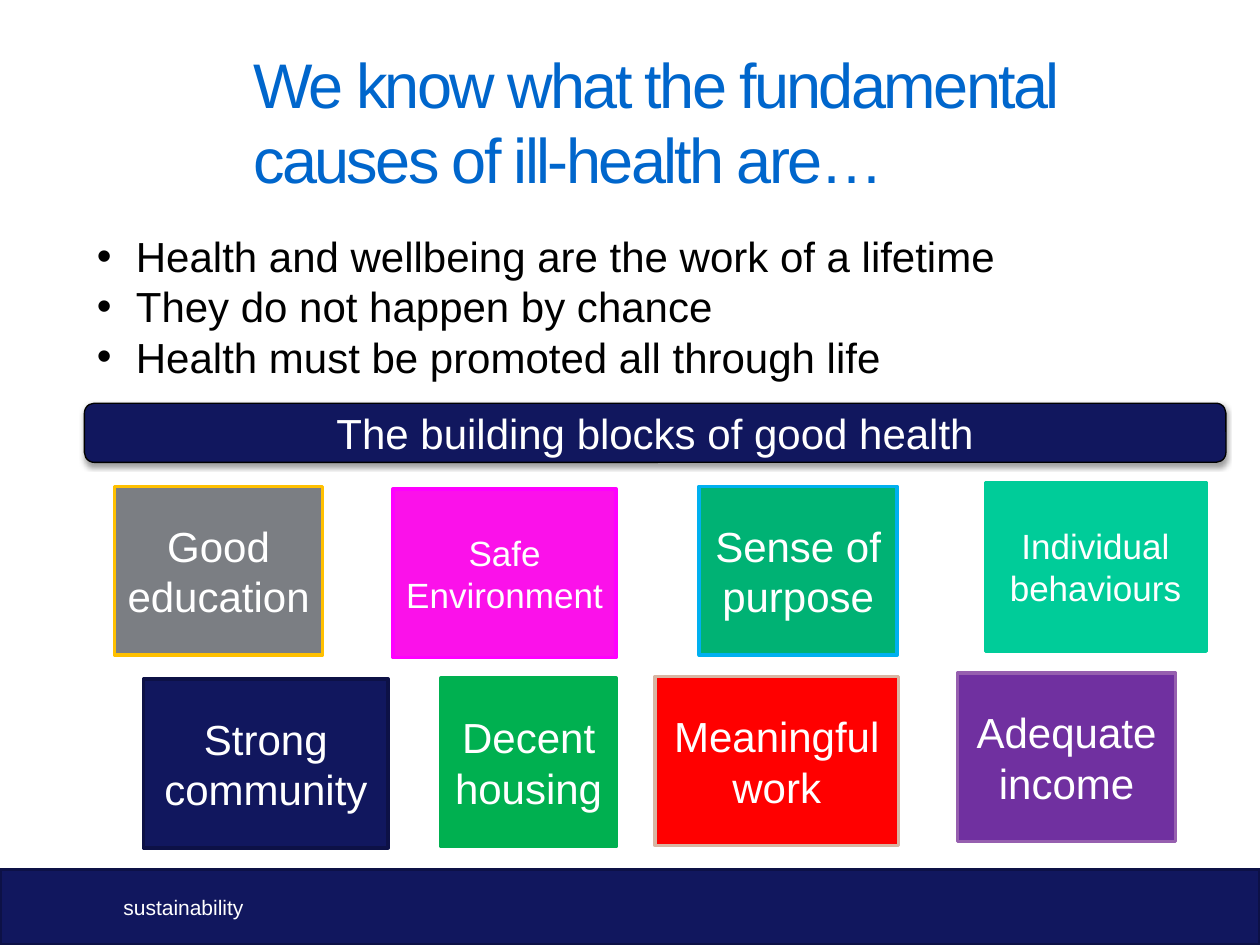
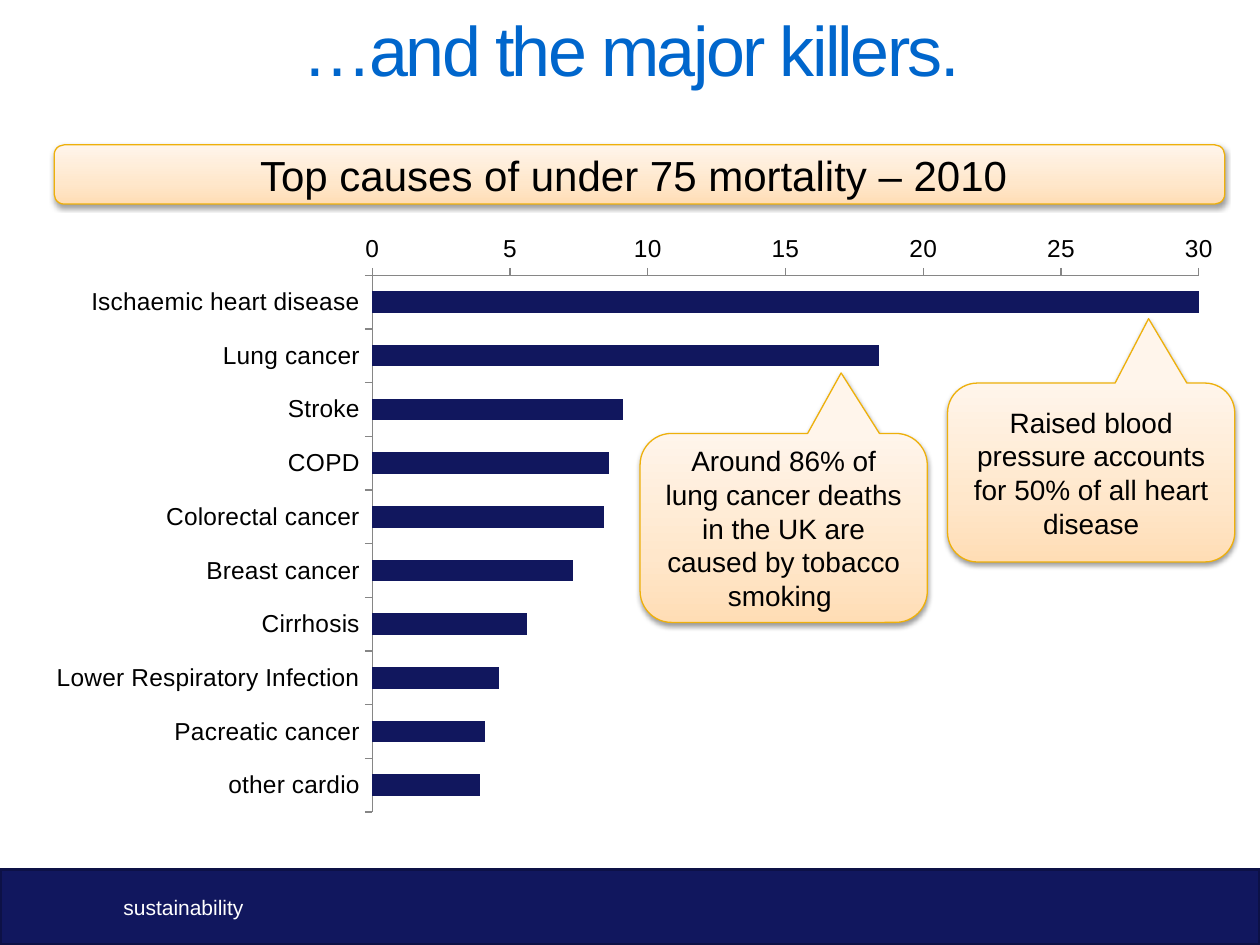
from dataclasses import dataclass

import pptx
import pptx.chart.data
import pptx.dml.color
import pptx.enum.chart
import pptx.enum.shapes
import pptx.enum.text
import pptx.oxml
import pptx.oxml.ns
import pptx.util
from pptx.dml.color import RGBColor
from pptx.util import Inches

FONT = "Arial"
WHITE = RGBColor(0xFF, 0xFF, 0xFF)
BLACK = RGBColor(0x00, 0x00, 0x00)
NAVY = RGBColor(0x11, 0x17, 0x5E)
DARK_NAVY = RGBColor(0x0D, 0x11, 0x46)
TITLE_BLUE = RGBColor(0x00, 0x66, 0xCC)
AXIS_GREY = RGBColor(0x86, 0x86, 0x86)
AMBER = RGBColor(0xEE, 0xB0, 0x0B)
GOLD = RGBColor(0xFF, 0xC0, 0x00)
GREY = RGBColor(0x7B, 0x7E, 0x83)
GREEN = RGBColor(0x00, 0xB0, 0x50)
SEA_GREEN = RGBColor(0x00, 0xB2, 0x74)
SKY = RGBColor(0x00, 0xB0, 0xF0)
RED = RGBColor(0xFF, 0x00, 0x00)
SAND = RGBColor(0xD8, 0xB5, 0xA3)
PURPLE = RGBColor(0x70, 0x30, 0xA0)
LILAC = RGBColor(0x96, 0x5F, 0xAF)
PINK = RGBColor(0xFB, 0x11, 0xEA)
MAGENTA = RGBColor(0xFF, 0x00, 0xFF)
MINT = RGBColor(0x00, 0xCC, 0x99)
PEACH_STOPS = (
    (0, RGBColor(0xFF, 0xDD, 0xB5)),
    (35, RGBColor(0xFF, 0xE7, 0xCB)),
    (100, RGBColor(0xFF, 0xF5, 0xEB)),
)

RECTANGLE = pptx.enum.shapes.MSO_SHAPE.RECTANGLE
ROUNDED = pptx.enum.shapes.MSO_SHAPE.ROUNDED_RECTANGLE
CALLOUT = pptx.enum.shapes.MSO_SHAPE.ROUNDED_RECTANGULAR_CALLOUT
MIDDLE = pptx.enum.text.MSO_ANCHOR.MIDDLE
TOP = pptx.enum.text.MSO_ANCHOR.TOP
CENTER = pptx.enum.text.PP_ALIGN.CENTER
LEFT = pptx.enum.text.PP_ALIGN.LEFT
BLOCK_HEIGHT = 1.34
BANNER_HEIGHT = 0.47


@dataclass(frozen=True)
class Box:
    left: float
    top: float
    width: float
    height: float

    def lengths(self) -> tuple:
        return tuple(Inches(n) for n in (self.left, self.top, self.width, self.height))


@dataclass(frozen=True)
class Block:
    text: str
    left: float
    top: float
    width: float
    fill: RGBColor
    line: RGBColor
    size: int = 24


@dataclass(frozen=True)
class Callout:
    text: str
    box: Box
    pointer: tuple[float, float]


BLOCKS = (
    Block("Good education", 0.91, 3.86, 1.65, GREY, GOLD),
    Block("Safe Environment", 3.12, 3.88, 1.77, PINK, MAGENTA, 20),
    Block("Sense of purpose", 5.55, 3.86, 1.57, SEA_GREEN, SKY),
    Block("Individual behaviours", 7.82, 3.83, 1.75, MINT, MINT, 20),
    Block("Strong community", 1.14, 5.39, 1.94, NAVY, DARK_NAVY),
    Block("Decent housing", 3.5, 5.38, 1.39, GREEN, GREEN),
    Block("Meaningful work", 5.2, 5.37, 1.93, RED, SAND),
    Block("Adequate income", 7.6, 5.34, 1.73, PURPLE, LILAC),
)
LIFETIME_POINTS = (
    "Health and wellbeing are the work of a lifetime",
    "They do not happen by chance",
    "Health must be promoted all through life",
)
MORTALITY = {
    "Ischaemic heart disease": 30,
    "Lung cancer": 18.4,
    "Stroke": 9.1,
    "COPD": 8.6,
    "Colorectal cancer": 8.4,
    "Breast cancer": 7.3,
    "Cirrhosis": 5.6,
    "Lower Respiratory Infection": 4.6,
    "Pacreatic cancer": 4.1,
    "other cardio": 3.9,
}
CALLOUTS = (
    Callout("Raised blood pressure accounts for 50% of all heart disease",
            Box(7.52, 3.04, 2.28, 1.42), (0.2, -0.86)),
    Callout("Around 86% of lung cancer deaths in the UK are caused by tobacco smoking ",
            Box(5.08, 3.44, 2.28, 1.5), (0.2, -0.82)),
)


def make_element(tag: str, **attributes: object):
    element = pptx.oxml.parse_xml(f"<{tag} {pptx.oxml.ns.nsdecls(tag.split(':')[0])}/>")
    for name, value in attributes.items():
        element.set(name, str(value))
    return element


def write_text(shape, lines: tuple[str, ...], size: float, color: RGBColor,
               align=LEFT, anchor=TOP) -> None:
    frame = shape.text_frame
    frame.word_wrap = True
    frame.vertical_anchor = anchor
    frame.text = "\n".join(lines)
    for paragraph in frame.paragraphs:
        paragraph.alignment = align
        for run in paragraph.runs:
            run.font.name = FONT
            run.font.size = pptx.util.Pt(size)
            run.font.color.rgb = color


def add_text(slide, box: Box, lines: tuple[str, ...], size: float, color: RGBColor,
             anchor=TOP, inset: bool = True):
    text_box = slide.shapes.add_textbox(*box.lengths())
    if not inset:
        frame = text_box.text_frame
        frame.margin_left = frame.margin_right = 0
        frame.margin_top = frame.margin_bottom = 0
    write_text(text_box, lines, size, color, anchor=anchor)
    return text_box


def add_panel(slide, kind, box: Box, fill: RGBColor, line: RGBColor, line_width: float):
    shape = slide.shapes.add_shape(kind, *box.lengths())
    shape.shadow.inherit = False
    shape.fill.solid()
    shape.fill.fore_color.rgb = fill
    shape.line.color.rgb = line
    shape.line.width = pptx.util.Pt(line_width)
    return shape


def make_color(color: RGBColor):
    return make_element("a:srgbClr", val=color)


def add_shadow(shape) -> None:
    shadow = make_element("a:outerShdw", blurRad=pptx.util.Pt(3.1), dist=pptx.util.Pt(1.6),
                          dir=90 * 60000, rotWithShape=0)
    color = make_color(BLACK)
    color.append(make_element("a:alpha", val=38000))
    shadow.append(color)
    shape._element.spPr.find(pptx.oxml.ns.qn("a:effectLst")).append(shadow)


def add_peach_panel(slide, kind, box: Box, text: str, size: float):
    """Shaded panel with an amber outline, darkest at its lower edge."""
    shape = add_panel(slide, kind, box, WHITE, AMBER, 0.75)
    shape.fill.gradient()
    shape.fill.gradient_angle = 90
    stops = shape._element.spPr.find(".//" + pptx.oxml.ns.qn("a:gsLst"))
    for stop in list(stops):
        stops.remove(stop)
    for percent, color in PEACH_STOPS:
        stop = make_element("a:gs", pos=percent * 1000)
        stop.append(make_color(color))
        stops.append(stop)
    add_shadow(shape)
    write_text(shape, (text,), size, BLACK, CENTER, MIDDLE)
    return shape


def add_title(slide, box: Box, text: str, size: float) -> None:
    title = add_text(slide, box, (text,), size, TITLE_BLUE, inset=False)
    for run in title.text_frame.paragraphs[0].runs:
        run._r.get_or_add_rPr().set("spc", "-150")


def add_slide(presentation):
    """Blank slide with the footer band."""
    slide = presentation.slides.add_slide(presentation.slide_layouts[6])
    add_panel(slide, RECTANGLE, Box(0, 6.9, 10, 0.6), NAVY, DARK_NAVY, 2)
    add_text(slide, Box(0.98, 6.9, 8.82, 0.6), ("sustainability",), 12, WHITE,
             anchor=MIDDLE, inset=False)
    return slide


def add_bullets(slide, box: Box, lines: tuple[str, ...]) -> None:
    text_box = add_text(slide, box, lines, 24, BLACK)
    for paragraph in text_box.text_frame.paragraphs:
        properties = paragraph._p.get_or_add_pPr()
        properties.set("marL", str(Inches(0.31)))
        properties.set("indent", str(-Inches(0.31)))
        properties.append(make_element("a:buFont", typeface=FONT))
        properties.append(make_element("a:buChar", char="•"))


def set_plot_layout(chart, **fractions: float) -> None:
    """Fix the inner plot area as fractions of the chart."""
    layout = make_element("c:layout")
    manual = make_element("c:manualLayout")
    layout.append(manual)
    manual.append(make_element("c:layoutTarget", val="inner"))
    for mode in ("xMode", "yMode"):
        manual.append(make_element(f"c:{mode}", val="edge"))
    for name, value in fractions.items():
        manual.append(make_element(f"c:{name}", val=value))
    plot_area = chart._chartSpace.chart.plotArea
    for previous in plot_area.findall(pptx.oxml.ns.qn("c:layout")):
        plot_area.remove(previous)
    plot_area.insert(0, layout)


def add_mortality_chart(slide, box: Box) -> None:
    data = pptx.chart.data.CategoryChartData()
    data.categories = list(MORTALITY)
    data.add_series("Series 1", list(MORTALITY.values()))
    chart = slide.shapes.add_chart(
        pptx.enum.chart.XL_CHART_TYPE.BAR_CLUSTERED, *box.lengths(), data).chart
    chart.has_title = False
    chart.has_legend = False
    chart.font.name = FONT
    chart.font.size = pptx.util.Pt(14)
    chart.font.color.rgb = BLACK
    for axis in (chart.category_axis, chart.value_axis):
        axis.has_major_gridlines = False
        axis.major_tick_mark = pptx.enum.chart.XL_TICK_MARK.OUTSIDE
        axis.format.line.color.rgb = AXIS_GREY
        axis.format.line.width = pptx.util.Pt(0.75)
    chart.category_axis.reverse_order = True
    chart.value_axis.minimum_scale = 0
    chart.value_axis.maximum_scale = 30
    chart.value_axis.major_unit = 5
    plot = chart.plots[0]
    plot.gap_width = 150
    plot.vary_by_categories = False
    bars = plot.series[0].format.fill
    bars.solid()
    bars.fore_color.rgb = NAVY
    set_plot_layout(chart, x=0.27, y=0.18, w=0.71, h=0.82)


def build_causes_slide(presentation) -> None:
    slide = add_slide(presentation)
    add_bullets(slide, Box(0.67, 1.78, 8.98, 1.31), LIFETIME_POINTS)
    heading = add_panel(slide, ROUNDED, Box(0.67, 3.2, 9.06, BANNER_HEIGHT),
                        NAVY, BLACK, 0.75)
    add_shadow(heading)
    write_text(heading, ("The building blocks of good health",), 24, WHITE, CENTER, MIDDLE)
    for block in BLOCKS:
        box = Box(block.left, block.top, block.width, BLOCK_HEIGHT)
        shape = add_panel(slide, RECTANGLE, box, block.fill, block.line, 2)
        write_text(shape, (block.text,), block.size, WHITE, CENTER, MIDDLE)
    add_title(slide, Box(2.01, 0.36, 7.4, 1.25),
              "We know what the fundamental causes of ill-health are…", 36)


def build_killers_slide(presentation) -> None:
    slide = add_slide(presentation)
    add_mortality_chart(slide, Box(0.45, 1.25, 9.25, 5.2))
    add_peach_panel(slide, ROUNDED, Box(0.43, 1.15, 9.29, BANNER_HEIGHT),
                    "Top causes of under 75 mortality – 2010 ", 24)
    for callout in CALLOUTS:
        shape = add_peach_panel(slide, CALLOUT, callout.box, callout.text, 16)
        shape.adjustments[0], shape.adjustments[1] = callout.pointer
    add_title(slide, Box(2.4, 0.05, 7.1, 1), "…and the major killers.", 40)


def main() -> None:
    presentation = pptx.Presentation()
    presentation.slide_width = Inches(10)
    presentation.slide_height = Inches(7.5)
    build_causes_slide(presentation)
    build_killers_slide(presentation)
    presentation.save("out.pptx")


if __name__ == "__main__":
    main()
